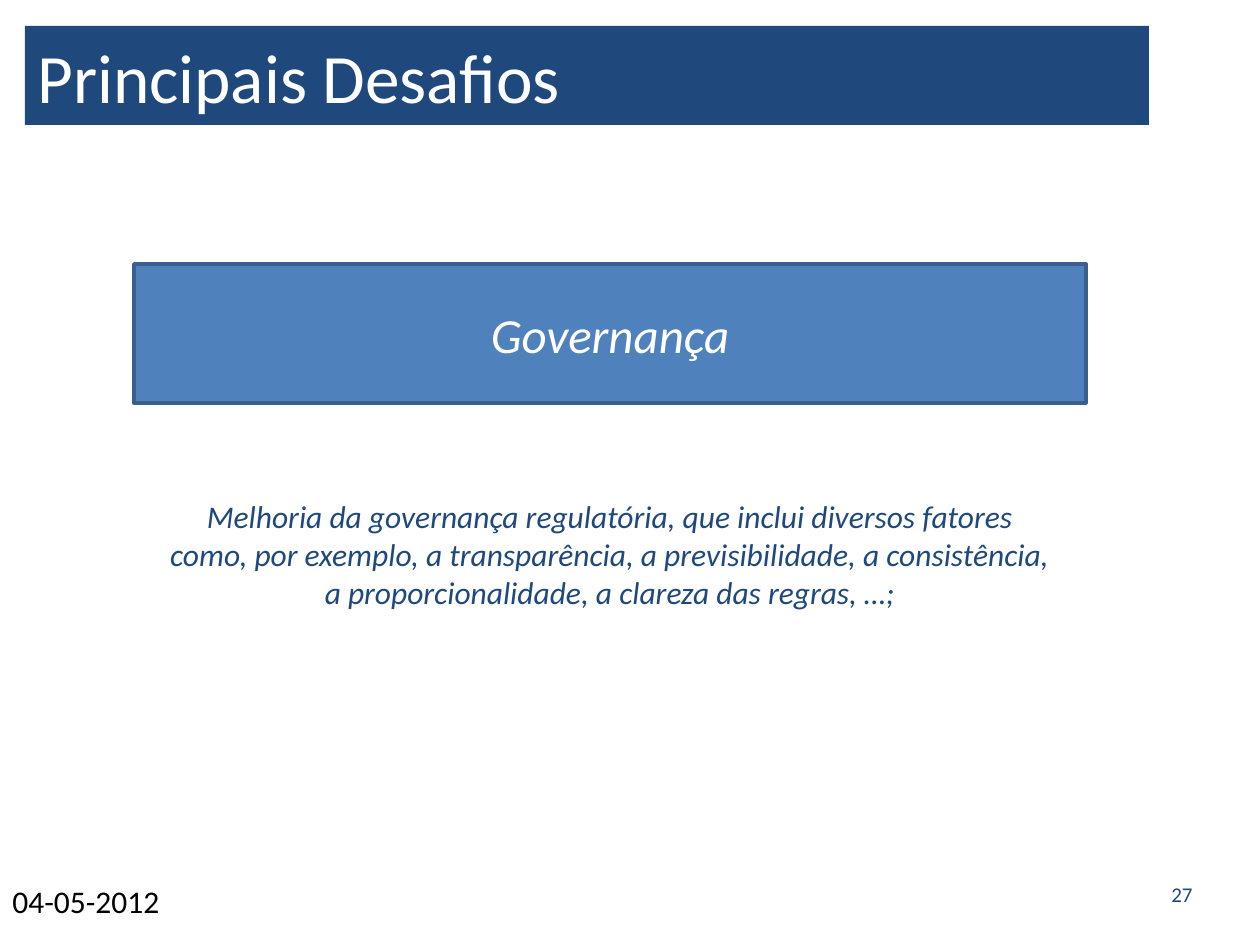
"""Build the "Principais Desafios" slide on governance."""
from pptx import Presentation
from pptx import util as u
from pptx.dml.color import RGBColor
from pptx.enum import shapes, text

PX = u.Inches(1) // 126
NAVY, BLUE, EDGE, WHITE, BLACK = "1F497D", "4F81BD", "3A5F8C", "FFFFFF", "000000"
LEFT, CENTER, RIGHT = text.PP_ALIGN.LEFT, text.PP_ALIGN.CENTER, text.PP_ALIGN.RIGHT
TOP, MIDDLE = text.MSO_ANCHOR.TOP, text.MSO_ANCHOR.MIDDLE


def color(value):
    return RGBColor.from_string(value)


def write(holder, words, size, ink, align, anchor, italic=False):
    frame = holder.text_frame
    frame.word_wrap = True
    frame.vertical_anchor = anchor
    paragraph = frame.paragraphs[0]
    paragraph.text = words
    paragraph.alignment = align
    font = paragraph.font
    font.name, font.size, font.italic = "Calibri", u.Pt(size), italic
    font.color.rgb = color(ink)


deck = Presentation()
deck.slide_width, deck.slide_height = 1260 * PX, 945 * PX
slide = deck.slides.add_slide(deck.slide_layouts[6])

bars = [
    ((25, 26, 1124, 99), NAVY, None, "Principais Desafios", 39.6, LEFT, False),
    ((134, 264, 952, 139), BLUE, EDGE, "Governança", 28, CENTER, True),
]
for box, fill, edge, words, size, align, italic in bars:
    bar = slide.shapes.add_shape(shapes.MSO_SHAPE.RECTANGLE, *[n * PX for n in box])
    bar.shadow.inherit = False
    bar.fill.solid()
    bar.fill.fore_color.rgb = color(fill)
    if edge:
        bar.line.color.rgb = color(edge)
        bar.line.width = u.Pt(2)
    else:
        bar.line.fill.background()
    write(bar, words, size, WHITE, align, MIDDLE, italic)

explanation = (
    "Melhoria da governança regulatória, que inclui diversos fatores como, "
    "por exemplo, a transparência, a previsibilidade, a consistência, "
    "a proporcionalidade, a clareza das regras, …;"
)
notes = [
    ((911, 869, 294, 50), "27", 12, NAVY, RIGHT, MIDDLE, False),
    ((0, 876, 294, 50), "04-05-2012", 18, BLACK, LEFT, TOP, False),
    ((154, 491, 912, 127), explanation, 18, NAVY, CENTER, TOP, True),
]
for box, *content in notes:
    write(slide.shapes.add_textbox(*[n * PX for n in box]), *content)

deck.save("out.pptx")
